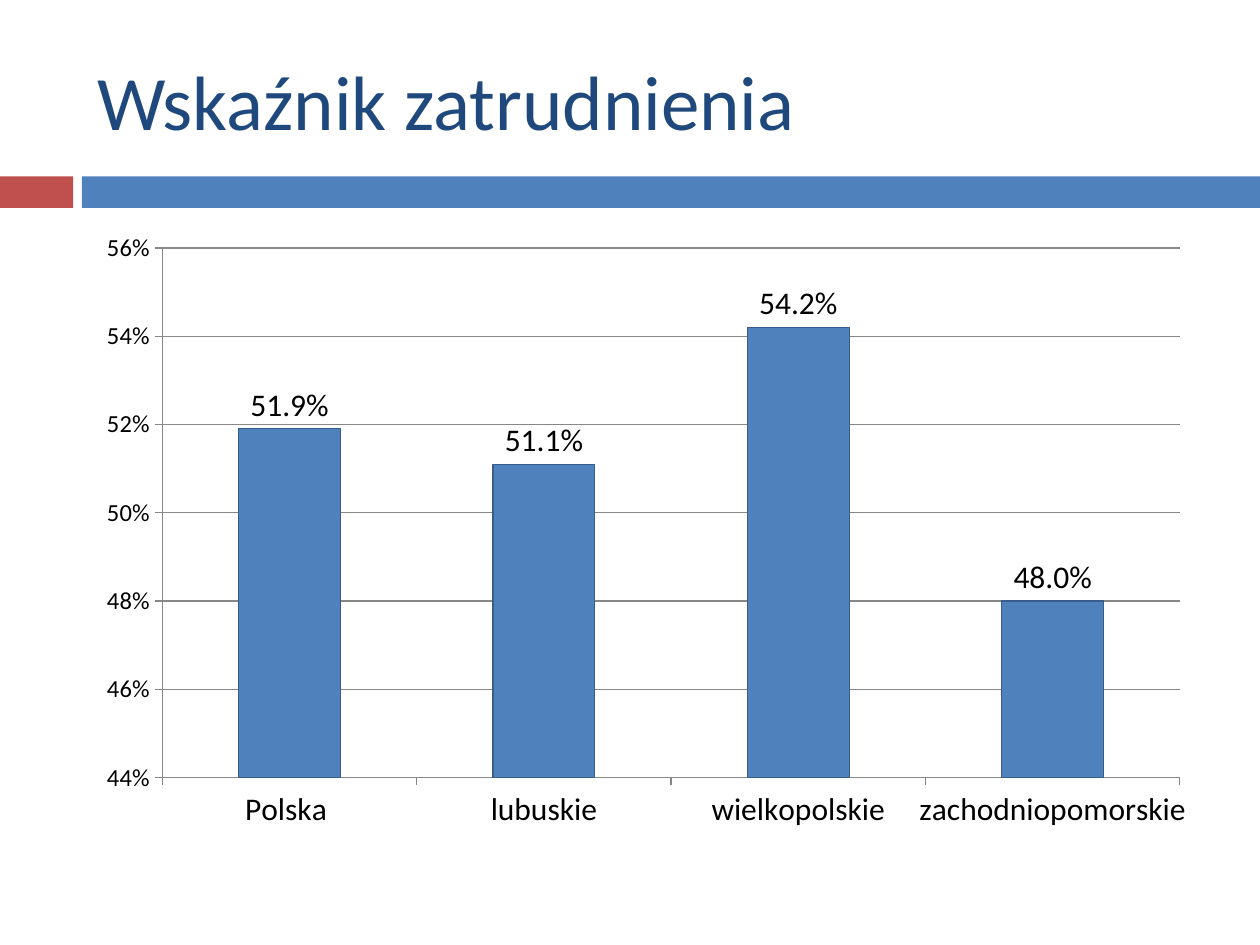
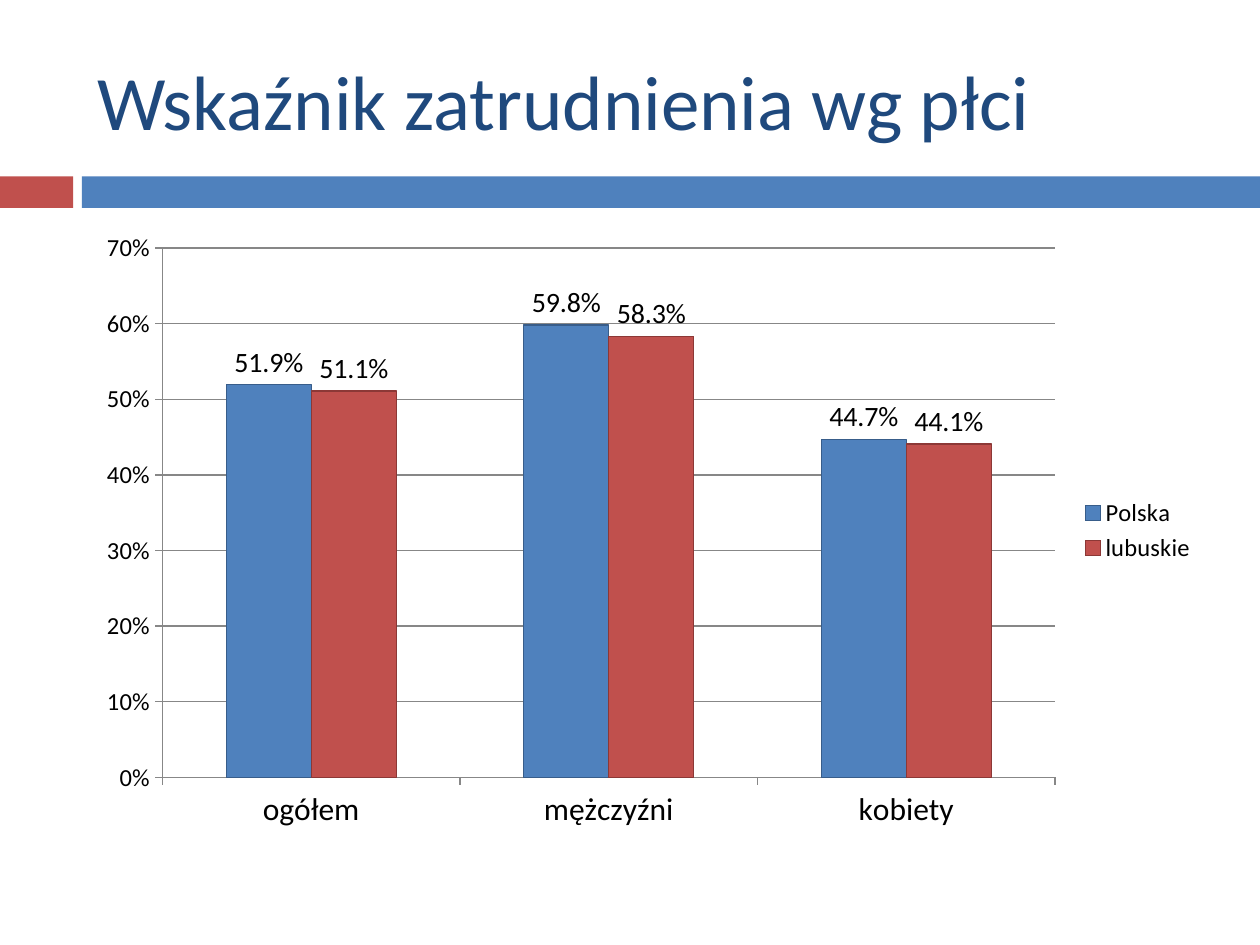
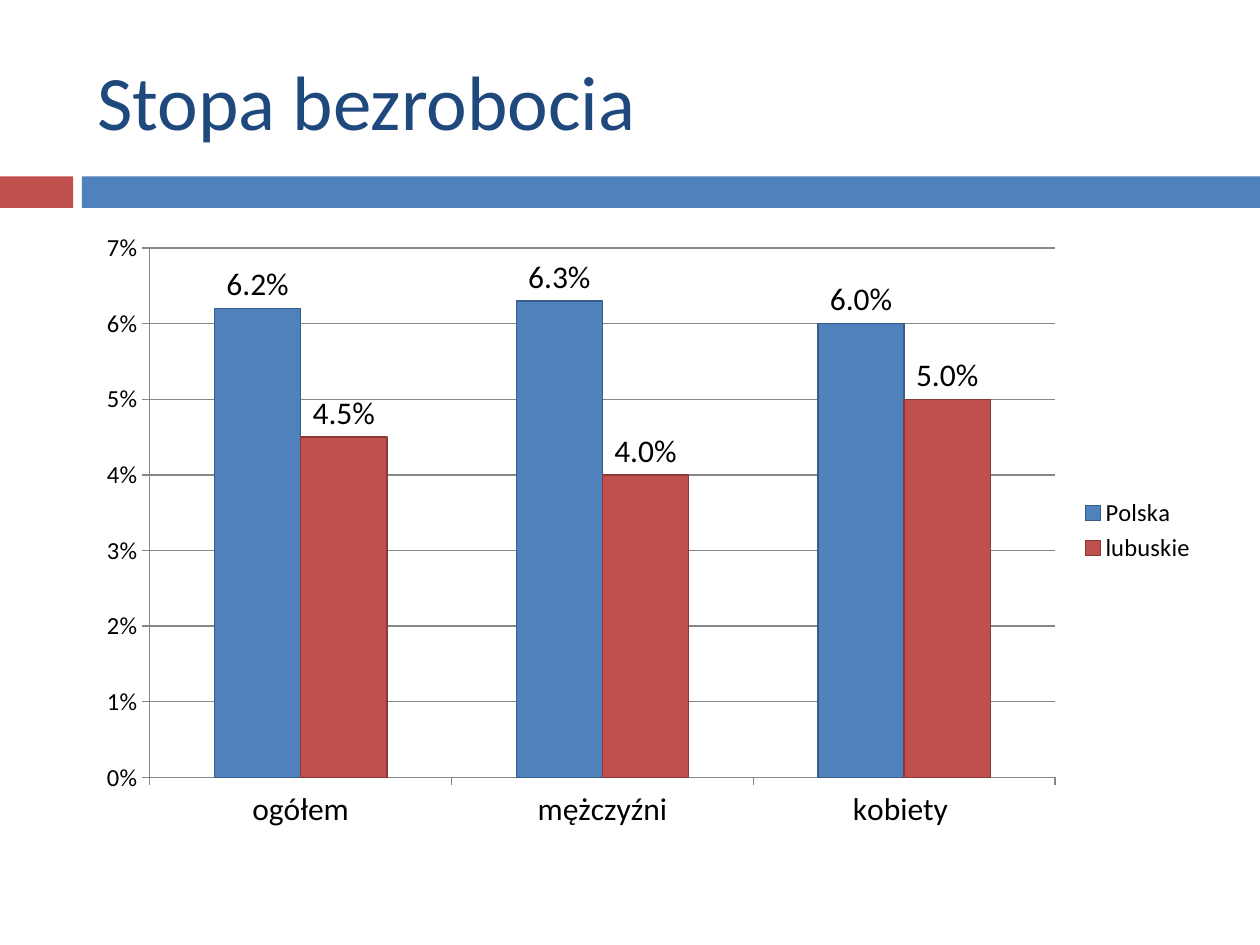
from pptx import Presentation
from pptx.chart.data import CategoryChartData
from pptx.dml.color import RGBColor
from pptx.enum.chart import XL_CHART_TYPE, XL_LABEL_POSITION, XL_LEGEND_POSITION, XL_TICK_MARK
from pptx.enum.shapes import MSO_SHAPE
from pptx.enum.text import MSO_ANCHOR, PP_ALIGN
from pptx.util import Inches, Pt

# Shared look
FONT = "Calibri"
BLUE, RED, NAVY, BLACK, GRAY = "4F81BD", "C0504D", "1F497D", "000000", "878787"
SERIES_COLORS = [(BLUE, "385D8A"), (RED, "8C3836")]
BANDS = [(0, 0.58, RED), (0.65, 9.35, BLUE)]
TITLE_BOX = {"left": 0.67, "top": 0.25, "width": 8.92, "height": 1.08}
CHART_BOX = (0.67, 1.75, 8.92, 4.92)

# Slide content: axis is minimum, maximum, major unit
SLIDES = [
    {"title": "Wskaźnik zatrudnienia",
     "axis": (0.44, 0.56, 0.02), "label_size": 18,
     "categories": ["Polska ", "lubuskie", "wielkopolskie", "zachodniopomorskie"],
     "series": {"Series 1": [0.519, 0.511, 0.542, 0.48]}},
    {"title": "Wskaźnik zatrudnienia wg płci",
     "axis": (0, 0.7, 0.1), "label_size": 16,
     "categories": ["ogółem", "mężczyźni", "kobiety"],
     "series": {"Polska ": [0.519, 0.598, 0.447], "lubuskie": [0.511, 0.583, 0.441]}},
    {"title": "Stopa bezrobocia",
     "axis": (0, 0.07, 0.01), "label_size": 18,
     "categories": ["ogółem", "mężczyźni", "kobiety "],
     "series": {"Polska ": [0.062, 0.063, 0.06], "lubuskie": [0.045, 0.04, 0.05]}},
]


def color(hex_value):
    return RGBColor.from_string(hex_value)


def format_font(font, size, hex_value=BLACK):
    for name, value in {"name": FONT, "size": Pt(size), "bold": False}.items():
        setattr(font, name, value)
    font.color.rgb = color(hex_value)


presentation = Presentation()
presentation.slide_width = Inches(10)
presentation.slide_height = Inches(7.5)
layout = presentation.slide_layouts[5]

for content in SLIDES:
    slide = presentation.slides.add_slide(layout)

    # Bands under the title
    for left, width, fill in BANDS:
        band = slide.shapes.add_shape(
            MSO_SHAPE.RECTANGLE, Inches(left), Inches(1.4), Inches(width), Inches(0.25))
        band.shadow.inherit = False
        band.fill.solid()
        band.fill.fore_color.rgb = color(fill)
        band.line.fill.background()

    # Title
    title = slide.shapes.title
    for name, value in TITLE_BOX.items():
        setattr(title, name, Inches(value))
    title.text_frame.text = content["title"]
    title.text_frame.vertical_anchor = MSO_ANCHOR.MIDDLE
    paragraph = title.text_frame.paragraphs[0]
    paragraph.alignment = PP_ALIGN.LEFT
    format_font(paragraph.runs[0].font, 44, NAVY)

    # Column chart
    chart_data = CategoryChartData(number_format="0.0%")
    chart_data.categories = content["categories"]
    for name, values in content["series"].items():
        chart_data.add_series(name, values)
    chart = slide.shapes.add_chart(
        XL_CHART_TYPE.COLUMN_CLUSTERED, *map(Inches, CHART_BOX), chart_data).chart
    format_font(chart.font, 18)
    chart.has_title = False
    chart.has_legend = len(content["series"]) > 1
    if chart.has_legend:
        chart.legend.position = XL_LEGEND_POSITION.RIGHT
        chart.legend.include_in_layout = False
        format_font(chart.legend.font, 14)

    # Axes
    for axis, size in ((chart.category_axis, 18), (chart.value_axis, 14)):
        axis.major_tick_mark = XL_TICK_MARK.OUTSIDE
        axis.minor_tick_mark = XL_TICK_MARK.NONE
        axis.format.line.color.rgb = color(GRAY)
        axis.format.line.width = Pt(0.75)
        format_font(axis.tick_labels.font, size)
    value_axis = chart.value_axis
    scale_names = ("minimum_scale", "maximum_scale", "major_unit")
    for name, value in zip(scale_names, content["axis"]):
        setattr(value_axis, name, value)
    value_axis.tick_labels.number_format = "0%"
    value_axis.tick_labels.number_format_is_linked = False
    value_axis.has_major_gridlines = True
    value_axis.major_gridlines.format.line.color.rgb = color(GRAY)
    value_axis.major_gridlines.format.line.width = Pt(0.75)

    # Columns and their labels
    plot = chart.plots[0]
    plot.vary_by_categories = False
    plot.gap_width = 150
    for series, (fill, outline) in zip(plot.series, SERIES_COLORS):
        series.format.fill.solid()
        series.format.fill.fore_color.rgb = color(fill)
        series.format.line.color.rgb = color(outline)
        series.format.line.width = Pt(0.75)
        label_format = {"show_value": True, "number_format": "0.0%",
                        "number_format_is_linked": False,
                        "position": XL_LABEL_POSITION.OUTSIDE_END}
        for name, value in label_format.items():
            setattr(series.data_labels, name, value)
        format_font(series.data_labels.font, content["label_size"])

presentation.save("out.pptx")
